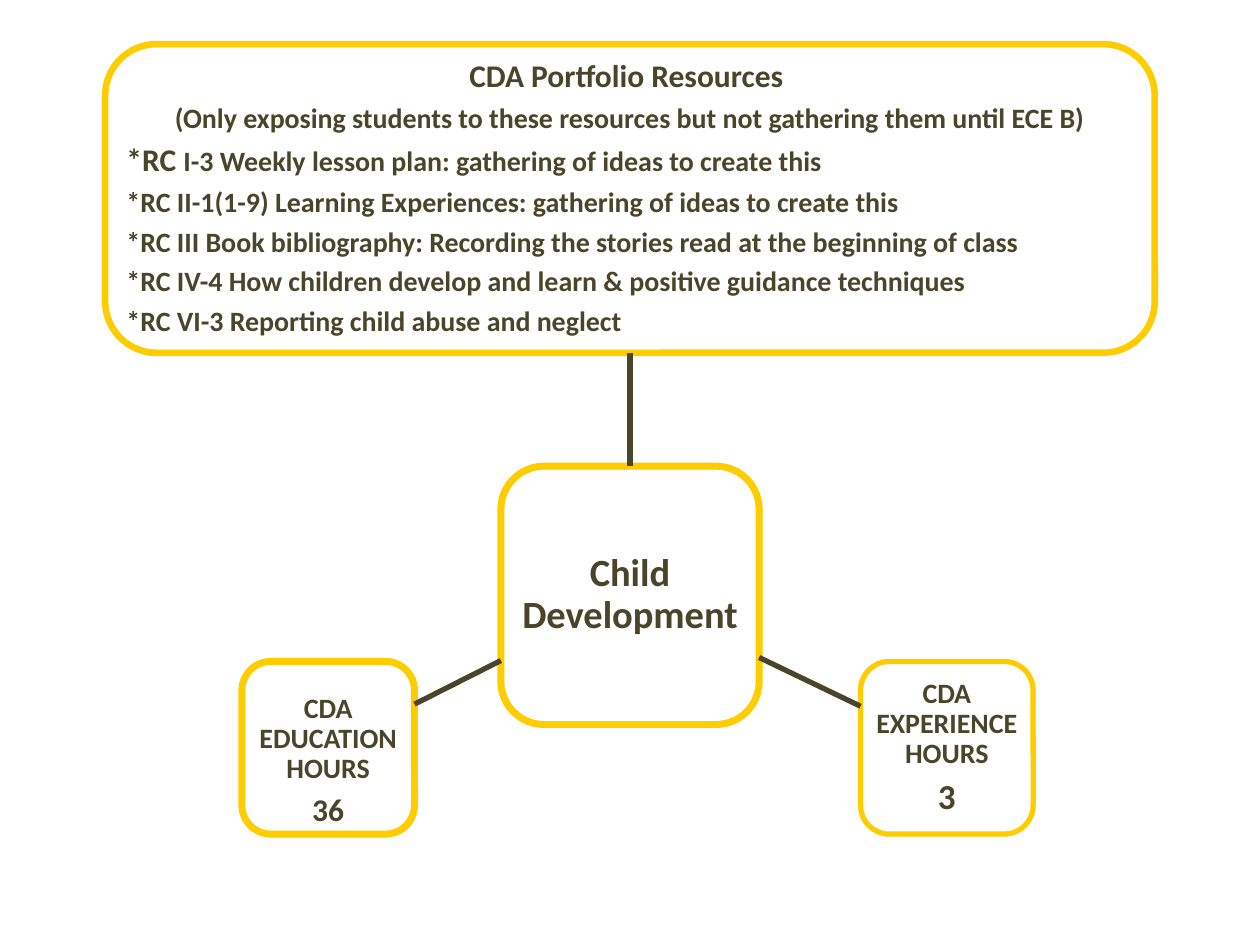
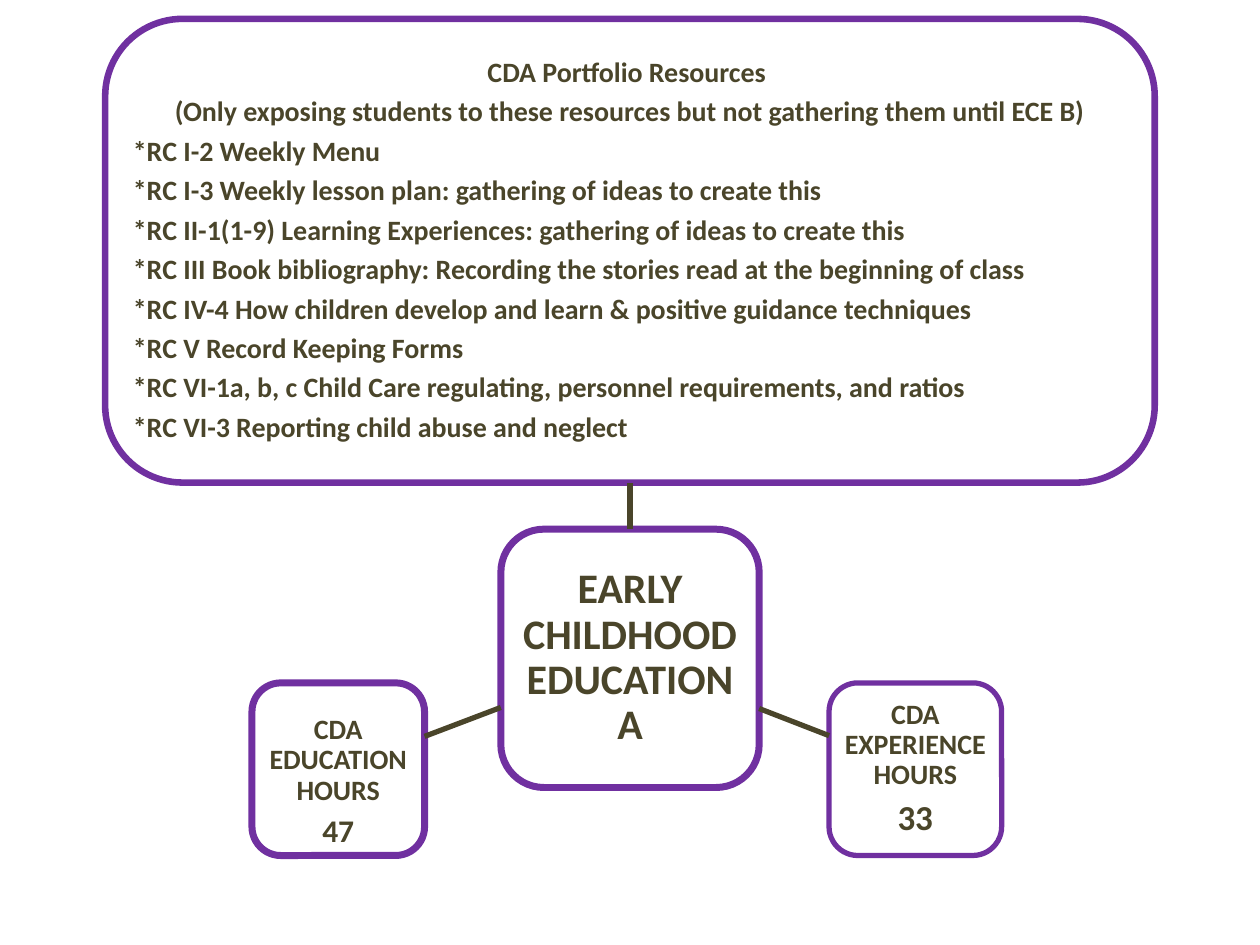
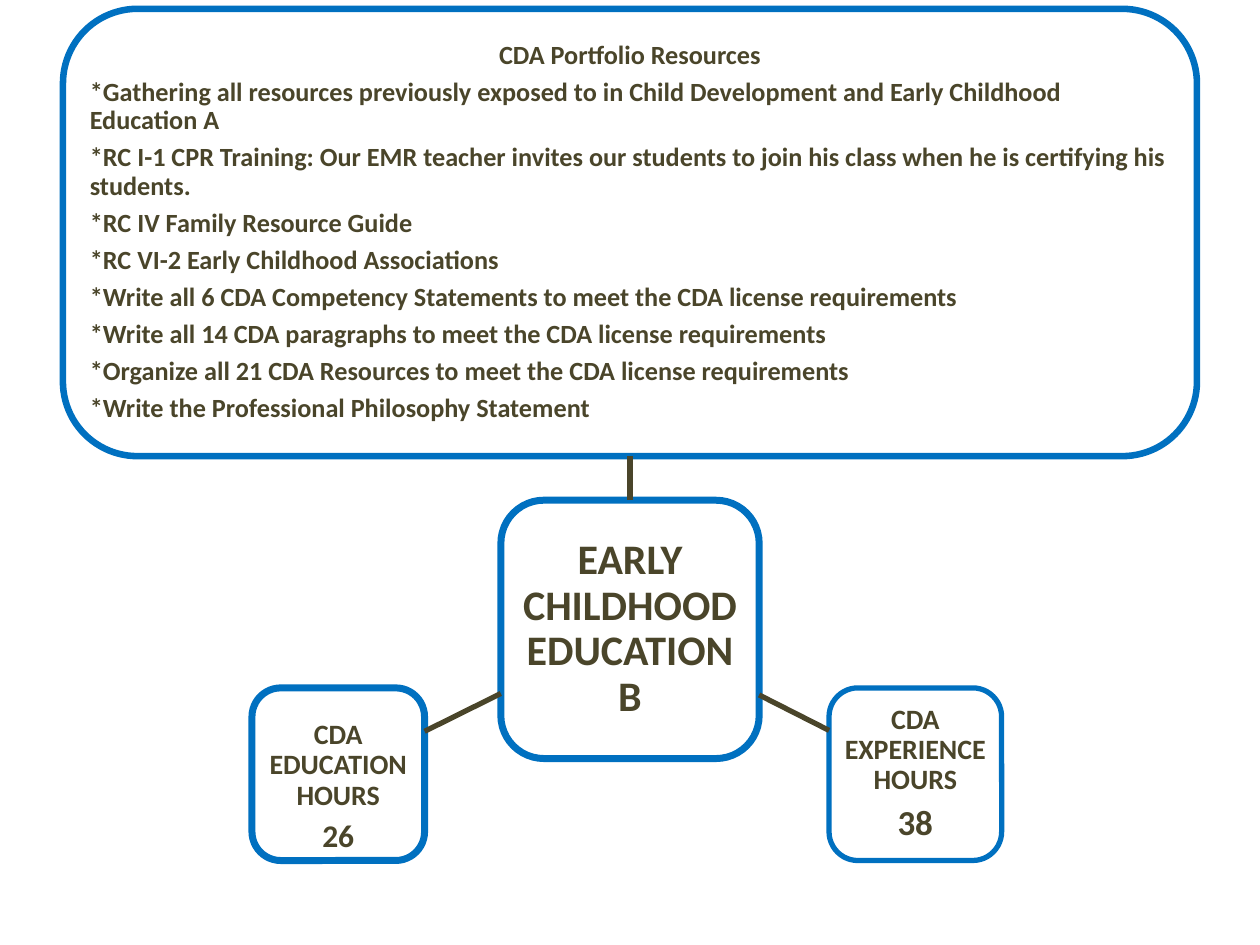
from lxml import etree
from pptx import Presentation
from pptx.dml.color import RGBColor
from pptx.enum.shapes import MSO_CONNECTOR, MSO_SHAPE
from pptx.enum.text import MSO_ANCHOR, PP_ALIGN
from pptx.oxml.ns import qn
from pptx.util import Inches, Pt

ROUND = MSO_SHAPE.ROUNDED_RECTANGLE
STRAIGHT = MSO_CONNECTOR.STRAIGHT
MIDDLE = MSO_ANCHOR.MIDDLE
LEFT, CENTER = PP_ALIGN.LEFT, PP_ALIGN.CENTER
TOP, BOTTOM = 0, 2  # connection sites

# Grid: 100 columns by 75 rows of square cells
WIDTH, HEIGHT = Inches(10), Inches(7.5)
CELL = WIDTH / 100
MID = 50      # centre column
HUB = 20.5    # side of the course box
HOURS = 13.7  # side of an hours box

FONT, INK = "Calibri", "4A452A"
HEAD = "CDA Portfolio Resources "
NOTE = "(Only exposing students to these resources but not gathering them until ECE B)"
PLAN = "I-3 Weekly lesson plan: gathering of ideas to create this"
LEARN = "*RC II-1(1-9) Learning Experiences: gathering of ideas to create this"
BOOK = "*RC III Book bibliography: Recording the stories read at the beginning of class"
GUIDE = "*RC IV-4 How children develop and learn & positive guidance techniques"
ABUSE = "*RC VI-3 Reporting child abuse and neglect"


def color(code):
    return RGBColor.from_string(code)


def grid(cells):
    return round(cells * CELL)


def para(align, size, *runs):
    """One paragraph: runs are texts, or (text, size) pairs."""
    return align, [run if isinstance(run, tuple) else (run, size) for run in runs]


def paras(align, size, *lines):
    return [para(align, size, line) for line in lines]


def write(shape, items, pads):
    """Fill a shape with paragraphs; pads are left, top, right, bottom in cells."""
    frame = shape.text_frame
    frame.word_wrap = True
    frame.vertical_anchor = MIDDLE
    (frame.margin_left, frame.margin_top,
     frame.margin_right, frame.margin_bottom) = map(grid, pads)
    for row, (align, runs) in enumerate(items):
        line = frame.add_paragraph() if row else frame.paragraphs[0]
        line.alignment = align
        line.line_spacing = 0.9
        line.space_after = Pt(round(max(size for _, size in runs) / 3, 1))
        for text, size in runs:
            run = line.add_run()
            run.text = text
            run.font.name = FONT
            run.font.size = Pt(size)
            run.font.bold = True
            run.font.color.rgb = color(INK)


def box(slide, area, edge, weight, items, pads):
    shape = slide.shapes.add_shape(ROUND, *map(grid, area))
    shape.shadow.inherit = False
    shape.fill.background()
    shape.line.color.rgb = color(edge)
    shape.line.width = Pt(weight)
    write(shape, items, pads)
    return shape


def link(slide, start, end):
    line = slide.shapes.add_connector(STRAIGHT, *start, *end)
    line.line.color.rgb = color(INK)
    line.line.width = Pt(3)
    etree.SubElement(line._element.spPr, qn("a:effectLst"))
    return line


def center(shape):
    return shape.left + shape.width // 2, shape.top + shape.height // 2


def spoke(slide, hub, leaf):
    """Draw the part of the line between two centres that lies outside both boxes."""
    (hx, hy), (lx, ly) = center(hub), center(leaf)
    side = 1 if lx > hx else -1
    ends = []
    for x in (hx + side * hub.width // 2, lx - side * leaf.width // 2):
        ends.append((x, round(hy + (ly - hy) * (x - hx) / (lx - hx))))
    link(slide, *ends)


def course(deck, edge, name, size, hub_top, panel, lines, pad, leaves, hours):
    """One course slide: resources above, course in the middle, hours below."""
    slide = deck.slides.add_slide(deck.slide_layouts[6])

    # Course and its resources
    hub = box(slide, (MID - HUB / 2, hub_top, HUB, HUB), edge, 4,
              paras(CENTER, size, name), [0.65] * 4)
    top, wide, high = panel
    sheet = box(slide, (MID - wide / 2, top, wide, high), edge, 3.75, lines, [pad] * 4)
    stem = link(slide, center(hub), center(sheet))
    stem.begin_connect(hub, TOP)
    stem.end_connect(sheet, BOTTOM)

    # Hours on either side
    left, right, row = leaves
    learn, work = hours
    for col, kind, count, num, weight, pads in (
        (right, "EXPERIENCE", work, 20, 3, [0.4] * 4),
        (left, "EDUCATION", learn, 18, 4, [0.4, 2.1, 0.4, 0]),
    ):
        items = [para(CENTER, 16, f"CDA {kind} HOURS"), para(CENTER, num, str(count))]
        leaf = box(slide, (col, row, HOURS, HOURS), edge, weight, items, pads)
        spoke(slide, hub, leaf)


def main():
    deck = Presentation()
    deck.slide_width, deck.slide_height = WIDTH, HEIGHT

    # Child Development
    lines = [
        para(CENTER, 18, HEAD),
        para(CENTER, 16, NOTE),
        para(LEFT, 16, ("*RC ", 18), PLAN),
        *paras(LEFT, 16, LEARN, BOOK, GUIDE, ABUSE),
    ]
    course(deck, "FFCC00", "Child Development", 22, 37, (3.5, 83.3, 24.5),
           lines, 0.5, (19.2, 68.3, 52.5), (36, 3))

    # Early Childhood Education A
    lines = paras(CENTER, 16, HEAD, NOTE) + paras(
        LEFT, 16,
        "*RC I-2 Weekly Menu",
        "*RC " + PLAN,
        LEARN, BOOK, GUIDE,
        "*RC V Record Keeping Forms",
        "*RC VI-1a, b, c Child Care regulating, personnel requirements, and ratios",
        ABUSE)
    course(deck, "7030A0", "EARLY CHILDHOOD EDUCATION A", 24, 42, (1.5, 83.3, 36.8),
           lines, 0.4, (20, 65.8, 54.2), (47, 33))

    # Early Childhood Education B
    lines = paras(CENTER, 15, HEAD.strip()) + paras(
        LEFT, 15,
        "*Gathering all resources previously exposed to in Child Development"
        " and Early Childhood Education A",
        "*RC I-1 CPR Training: Our EMR teacher invites our students to join his class"
        " when he is certifying his students.",
        "*RC IV Family Resource Guide",
        "*RC VI-2 Early Childhood Associations",
        "*Write all 6 CDA Competency Statements to meet the CDA license requirements",
        "*Write all 14 CDA paragraphs to meet the CDA license requirements",
        "*Organize all 21 CDA Resources to meet the CDA license requirements",
        "*Write the Professional Philosophy Statement")
    course(deck, "0070C0", "EARLY CHILDHOOD EDUCATION B", 24, 39.7, (0.7, 90, 35.5),
           lines, 0.4, (20, 65.8, 54.6), (26, 38))

    deck.save("out.pptx")


if __name__ == "__main__":
    main()
